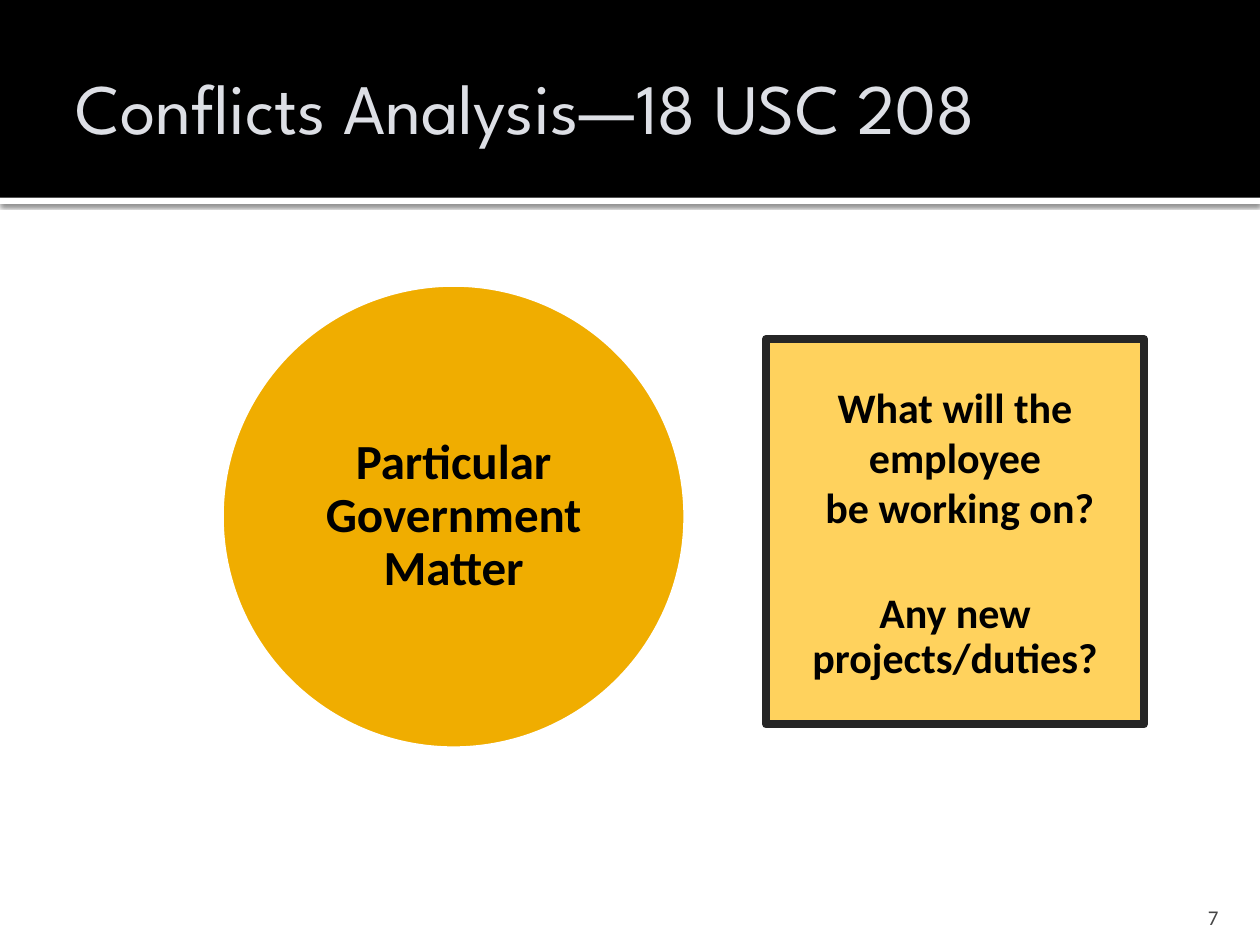
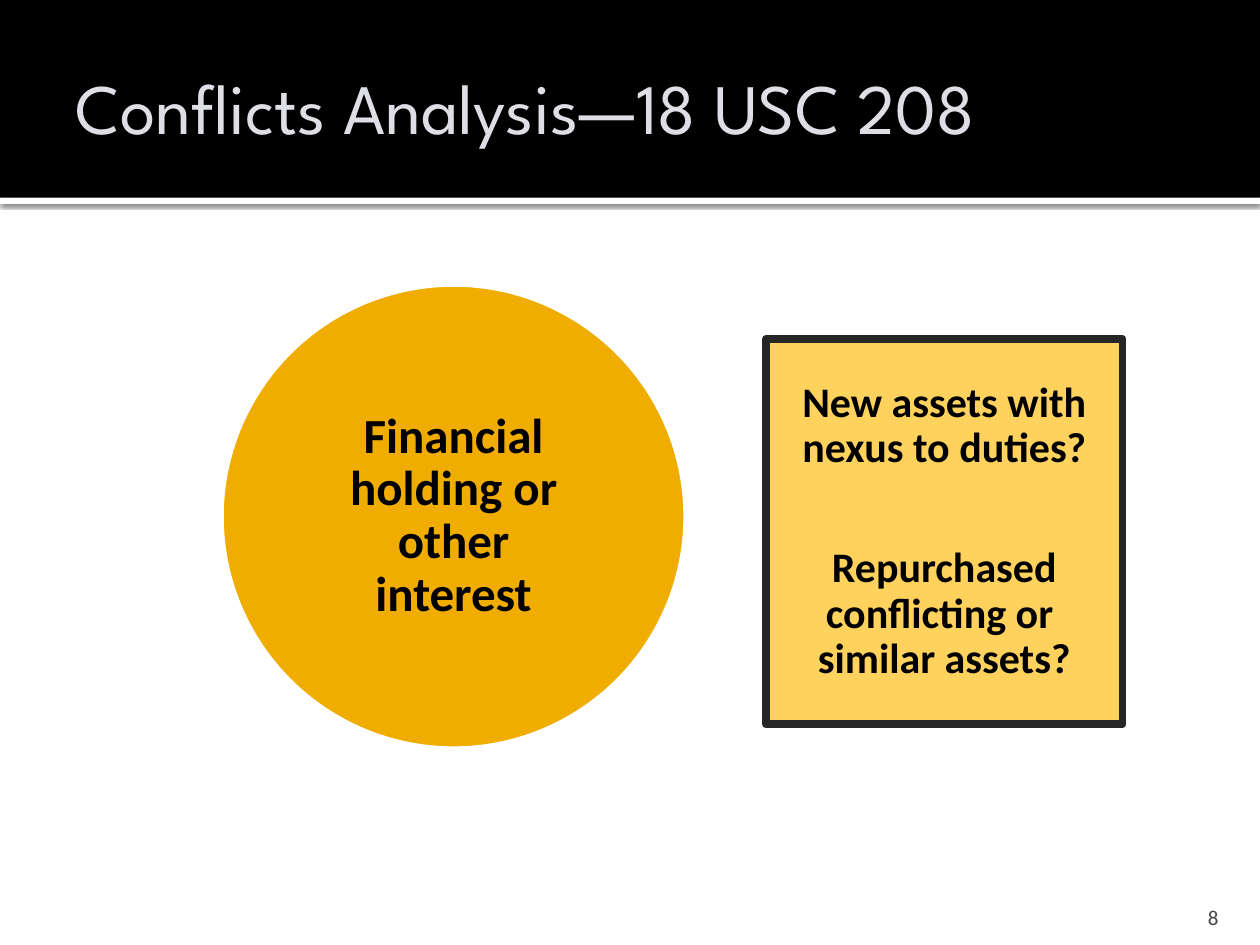
from dataclasses import dataclass
from lxml.etree import SubElement
from pptx import Presentation
from pptx.dml.color import RGBColor
from pptx.enum.shapes import MSO_SHAPE
from pptx.enum.text import MSO_ANCHOR, PP_ALIGN
from pptx.oxml.ns import qn
from pptx.util import Pt

TITLE = "Conflicts Analysis—18 USC 208"
PAGES = [
    {
        "num": "7",
        "label": "Particular Government Matter",
        "wide": 216,
        "asks": [
            ("What will the employee", 1, 0),
            (" be working on?", 1, 0),
            ("Any new projects/duties?", 0.9, 34),
        ],
    },
    {
        "num": "8",
        "label": "Financial holding or other interest",
        "wide": 203.76,
        "asks": [
            ("New assets with nexus to duties?", 0.9, 0),
            ("Repurchased conflicting or ", 0.9, 43),
            ("similar assets?", 0.9, 0),
        ],
    },
]


@dataclass(frozen=True)
class Theme:
    black: str = "000000"
    white: str = "FFFFFF"
    pale: str = "DDDFE5"
    gold: str = "F0AD00"
    sand: str = "FFD25D"
    edge: str = "262626"
    gray: str = "454545"
    head: str = "League Spartan"
    body: str = "Calibri"
    title: float = 40.5
    label: float = 28
    ask: float = 24
    foot: float = 12


LOOK = Theme()
WIDE, HIGH = 720, 540
BAND, RULE = 113, 3.6
DISC = (126, 162, 266.4, 266.4)
TAG_W, TAG_H = 153.4, 203.8
BOX_X, BOX_Y, BOX_H = 437.76, 193.68, 220.32


def apply(item, form):
    for name, value in form.items():
        setattr(item, name, value)


def place(item, area):
    apply(item, dict(zip(("left", "top", "width", "height"), map(Pt, area))))


def draw(slide, kind, area, fill, line=None, weight=0):
    shape = slide.shapes.add_shape(kind, *map(Pt, area))
    shape.shadow.inherit = False
    shape.fill.solid()
    shape.fill.fore_color.rgb = RGBColor.from_string(fill)
    if line:
        shape.line.color.rgb = RGBColor.from_string(line)
        shape.line.width = Pt(weight)
    else:
        shape.line.fill.background()
    return shape


def write(shape, lines, size, color, font=LOOK.body, bold=False,
          align=PP_ALIGN.CENTER, anchor=MSO_ANCHOR.MIDDLE, pad=(0, 0, 0, 0)):
    frame = shape.text_frame
    sides = ("margin_left", "margin_top", "margin_right", "margin_bottom")
    apply(frame, {"word_wrap": True, "vertical_anchor": anchor,
                  **dict(zip(sides, map(Pt, pad)))})
    for at, (text, space, gap) in enumerate(lines):
        para = frame.add_paragraph() if at else frame.paragraphs[0]
        apply(para, {"alignment": align, "line_spacing": space,
                     "space_before": Pt(gap)})
        run = para.add_run()
        run.text = text
        apply(run.font, {"name": font, "size": Pt(size), "bold": bold})
        run.font.color.rgb = RGBColor.from_string(color)


def shade(shape):
    effects = shape.element.spPr.find(qn("a:effectLst"))
    shadow = SubElement(effects, qn("a:outerShdw"), blurRad=str(Pt(2.5)),
                        dist=str(Pt(0.8)), dir="5400000")
    color = SubElement(shadow, qn("a:srgbClr"), val=LOOK.black)
    SubElement(color, qn("a:alpha"), val="60000")


def share(layout, slide):
    rule = draw(slide, MSO_SHAPE.RECTANGLE, (0, BAND, WIDE, RULE), LOOK.white)
    shade(rule)
    band = draw(slide, MSO_SHAPE.RECTANGLE, (0, 0, WIDE, BAND), LOOK.black)
    for spot, shape in enumerate((rule, band), 2):
        layout.shapes.element.insert(spot, shape.element)


def build(slide, page):
    title = slide.shapes.title
    place(title, (36, 21.6, 648, 98.64))
    write(title, [(TITLE, 1, 0)], LOOK.title, LOOK.pale, LOOK.head,
          align=PP_ALIGN.LEFT, pad=(7.2, 3.6, 3.6, 24))

    draw(slide, MSO_SHAPE.OVAL, DISC, LOOK.gold, LOOK.white, 3.78)
    left, top, wide, high = DISC
    tag = slide.shapes.add_textbox(
        Pt(left + (wide - TAG_W) / 2), Pt(top + (high - TAG_H) / 2),
        Pt(TAG_W), Pt(TAG_H))
    write(tag, [(page["label"], 0.9, 0)], LOOK.label, LOOK.black, bold=True)

    box = draw(slide, MSO_SHAPE.RECTANGLE, (BOX_X, BOX_Y, page["wide"], BOX_H),
               LOOK.sand, LOOK.edge, 4.5)
    write(box, page["asks"], LOOK.ask, LOOK.black, bold=True)

    foot = slide.shapes.add_textbox(*map(Pt, (645.84, 509.76, 57.6, 21.6)))
    write(foot, [(page["num"], 1, 0)], LOOK.foot, LOOK.gray,
          align=PP_ALIGN.RIGHT, anchor=MSO_ANCHOR.BOTTOM, pad=(7.2, 3.6, 7.2, 0))


def main():
    deck = Presentation()
    apply(deck, {"slide_width": Pt(WIDE), "slide_height": Pt(HIGH)})
    layout = deck.slide_layouts[5]
    for at, page in enumerate(PAGES):
        slide = deck.slides.add_slide(layout)
        if not at:
            share(layout, slide)
        build(slide, page)
    deck.save("out.pptx")


if __name__ == "__main__":
    main()
